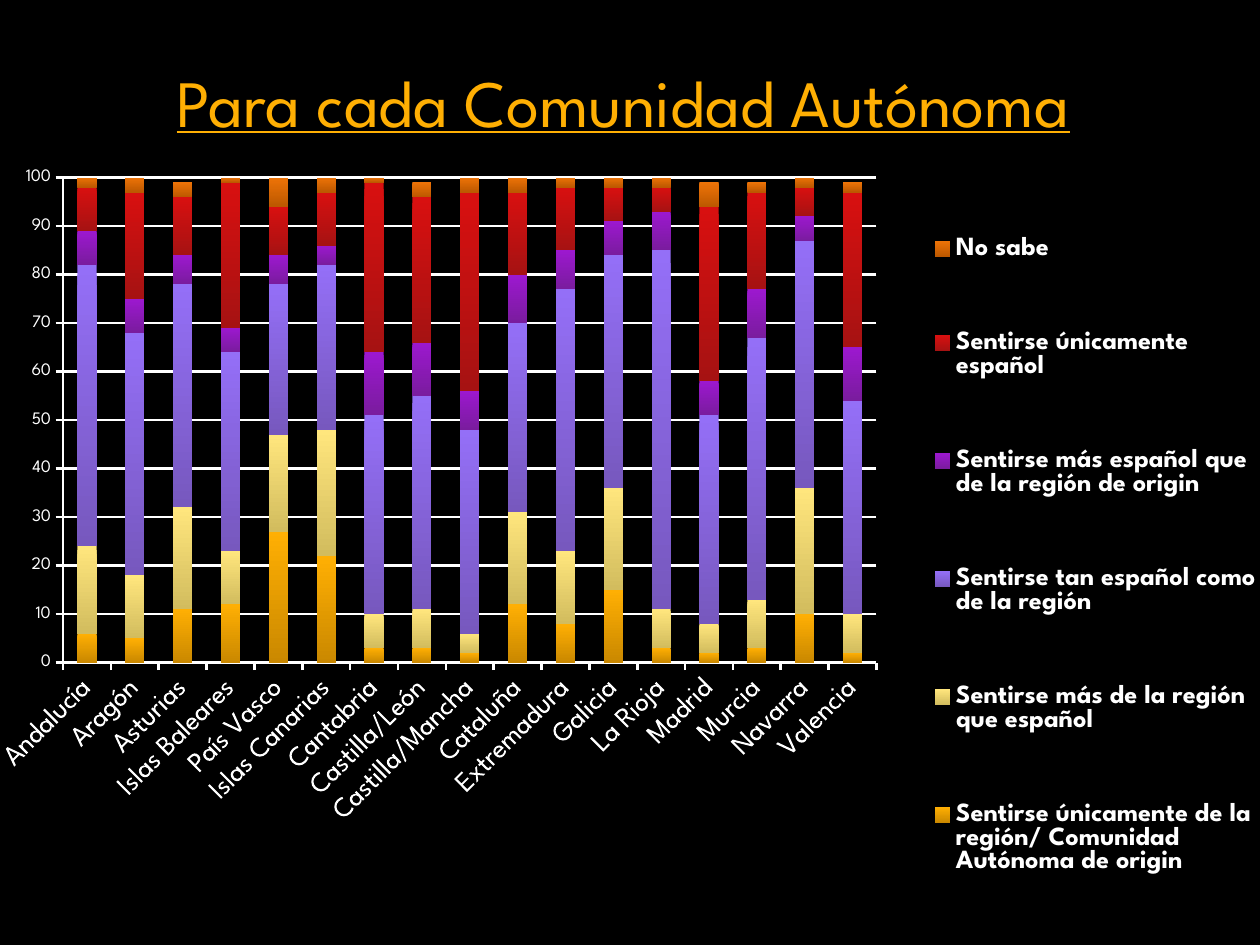
from lxml import etree
from pptx import Presentation
from pptx.chart.data import CategoryChartData
from pptx.dml.color import RGBColor
from pptx.enum.chart import XL_CHART_TYPE as ChartType, XL_LEGEND_POSITION as LegendPosition
from pptx.enum.chart import XL_TICK_MARK as TickMark
from pptx.enum.text import MSO_ANCHOR as Anchor, PP_ALIGN as Align
from pptx.oxml.ns import qn
from pptx.util import Inches, Pt

FONT = "League Spartan"
BLACK = RGBColor(0x00, 0x00, 0x00)
WHITE = RGBColor(0xFF, 0xFF, 0xFF)
ORANGE = RGBColor(0xFF, 0xAF, 0x03)
CHART_WIDTH, CHART_HEIGHT = 10.21, 6.18

REGIONS = [
    "Andalucía", "Aragón", "Asturias", "Islas Baleares", "País Vasco", "Islas Canarias",
    "Cantabria", "Castilla/León", "Castilla/Mancha", "Cataluña", "Extremadura", "Galicia",
    "La Rioja", "Madrid", "Murcia", "Navarra", "Valencia",
]
# Answer, percentage per region, gradient from top to bottom
ANSWERS = [
    ("Sentirse únicamente de la región/ Comunidad Autónoma de origin",
     [6, 5, 11, 12, 27, 22, 3, 3, 2, 12, 8, 15, 3, 2, 3, 10, 2],
     ORANGE, RGBColor(0xCA, 0x88, 0x00)),
    ("Sentirse más de la región que español",
     [18, 13, 21, 11, 20, 26, 7, 8, 4, 19, 15, 21, 8, 6, 10, 26, 8],
     RGBColor(0xFF, 0xE6, 0x7D), RGBColor(0xD2, 0xBC, 0x5E)),
    ("Sentirse tan español como de la región",
     [58, 50, 46, 41, 31, 34, 41, 44, 42, 39, 54, 48, 74, 43, 54, 51, 44],
     RGBColor(0x94, 0x6F, 0xF7), RGBColor(0x77, 0x58, 0xBE)),
    ("Sentirse más español que de la región de origin",
     [7, 7, 6, 5, 6, 4, 13, 11, 8, 10, 8, 7, 8, 7, 10, 5, 11],
     RGBColor(0x9C, 0x18, 0xCF), RGBColor(0x7A, 0x1C, 0x9E)),
    ("Sentirse únicamente español",
     [9, 22, 12, 30, 10, 11, 35, 30, 41, 17, 13, 7, 5, 36, 20, 6, 32],
     RGBColor(0xD8, 0x10, 0x10), RGBColor(0xA6, 0x12, 0x12)),
    ("No sabe",
     [2, 3, 3, 1, 6, 4, 2, 3, 3, 3, 3, 2, 2, 5, 2, 2, 2],
     RGBColor(0xED, 0x73, 0x07), RGBColor(0xBC, 0x58, 0x00)),
]


def style_font(font, size, color=WHITE, bold=False, underline=None):
    font.name = FONT
    font.size = Pt(size)
    font.bold = bold
    font.color.rgb = color
    if underline is not None:
        font.underline = underline


def add_text(slide, text, left, top, width, height, align=Align.LEFT, bottom_inset=0.05, **style):
    box = slide.shapes.add_textbox(Inches(left), Inches(top), Inches(width), Inches(height))
    frame = box.text_frame
    frame.word_wrap = True
    frame.vertical_anchor = Anchor.MIDDLE
    frame.margin_bottom = Inches(bottom_inset)
    paragraph = frame.paragraphs[0]
    paragraph.alignment = align
    run = paragraph.add_run()
    run.text = text
    style_font(run.font, **style)


def set_layout(element, left, top, width, height, inner=False):
    """Place a chart part, in inches from the chart's corner."""
    for old in element.findall(qn("c:layout")):
        element.remove(old)
    layout = etree.Element(qn("c:layout"))
    manual = etree.SubElement(layout, qn("c:manualLayout"))
    settings = [("layoutTarget", "inner")] if inner else []
    settings += [("xMode", "edge"), ("yMode", "edge"),
                 ("x", left / CHART_WIDTH), ("y", top / CHART_HEIGHT),
                 ("w", width / CHART_WIDTH), ("h", height / CHART_HEIGHT)]
    for tag, value in settings:
        etree.SubElement(manual, qn(f"c:{tag}")).set("val", str(value))
    position = element.find(qn("c:legendPos"))
    if position is None:
        element.insert(0, layout)
    else:
        position.addnext(layout)


def style_line(line, width=1.5):
    line.color.rgb = WHITE
    line.width = Pt(width)


def style_axes(chart):
    regions, percent = chart.category_axis, chart.value_axis
    for axis, size in ((regions, 16), (percent, 10)):
        style_font(axis.tick_labels.font, size)
        style_line(axis.format.line)
        axis.major_tick_mark = TickMark.OUTSIDE
        axis.minor_tick_mark = TickMark.NONE
    regions.tick_labels.font._element.getparent().getparent().getparent().find(
        qn("a:bodyPr")).set("rot", "-2700000")
    percent.minimum_scale, percent.maximum_scale, percent.major_unit = 0, 100, 10
    percent.has_major_gridlines = True
    style_line(percent.major_gridlines.format.line)


def add_identity_chart(slide):
    data = CategoryChartData(number_format="0")
    data.categories = REGIONS
    for answer, values, *_ in ANSWERS:
        data.add_series(answer, values)
    chart = slide.shapes.add_chart(ChartType.COLUMN_STACKED, Inches(0), Inches(1.32),
                                   Inches(CHART_WIDTH), Inches(CHART_HEIGHT), data).chart
    chart.has_title = False
    style_font(chart.font, 10)
    style_axes(chart)

    plot = chart.plots[0]
    plot.overlap, plot.gap_width = 100, 150
    plot.vary_by_categories = False
    for series, (_, _, *shades) in zip(plot.series, ANSWERS):
        fill = series.format.fill
        fill.gradient()
        fill.gradient_angle = 270
        for stop, shade in zip(fill.gradient_stops, shades):
            stop.color.rgb = shade

    chart.has_legend = True
    legend = chart.legend
    legend.position = LegendPosition.RIGHT
    legend.include_in_layout = False
    style_font(legend.font, 15, bold=True)
    set_layout(legend._element, 7.34, 0, 2.7, CHART_HEIGHT)
    plot_area = chart._chartSpace.find(f".//{qn('c:plotArea')}")
    set_layout(plot_area, 0.48, 0.09, 6.47, 3.85, inner=True)


def main():
    deck = Presentation()
    deck.slide_width, deck.slide_height = Inches(10), Inches(7.5)
    slide = deck.slides.add_slide(deck.slide_layouts[6])
    slide.background.fill.solid()
    slide.background.fill.fore_color.rgb = BLACK
    add_text(slide, "Para cada Comunidad Autónoma", 0.19, 0.44, 9.51, 1.17, align=Align.CENTER,
             bottom_inset=0.49, size=37.8, color=ORANGE, underline=True)
    add_identity_chart(slide)
    deck.save("out.pptx")


if __name__ == "__main__":
    main()
